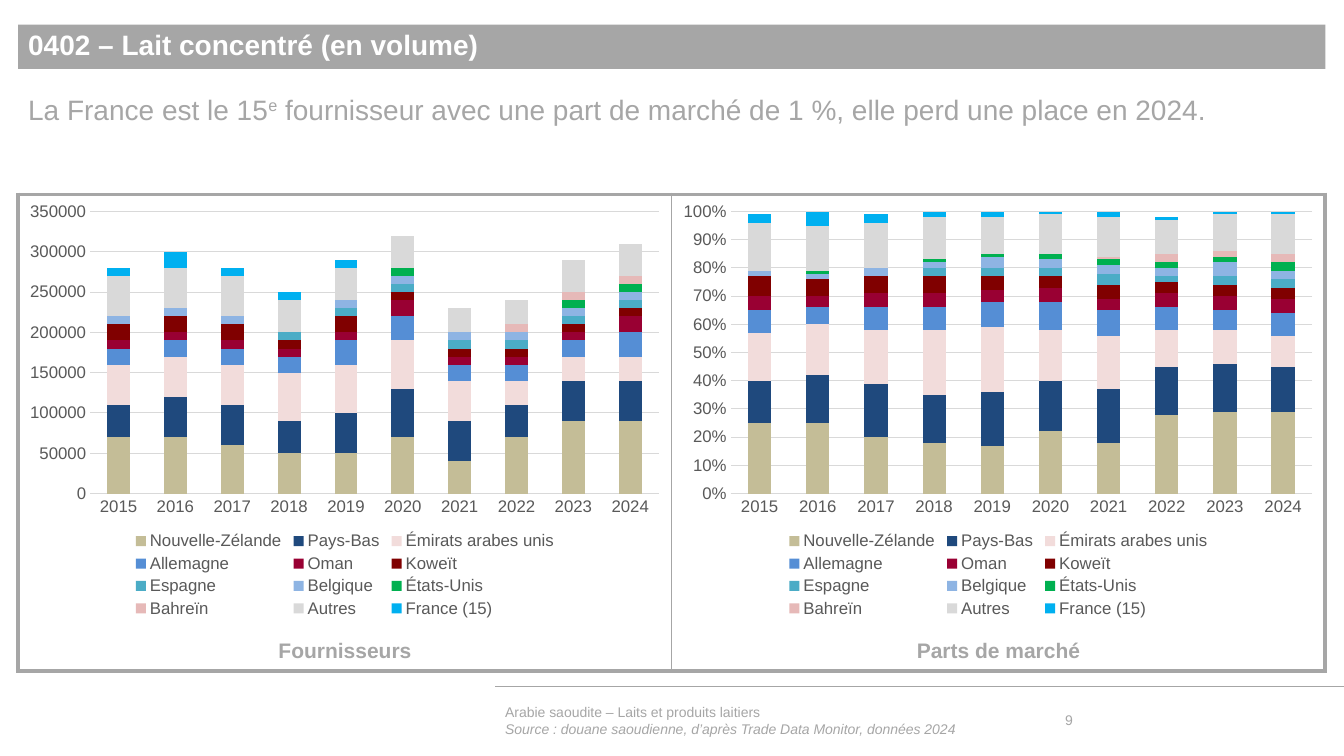
"""Build the slide on concentrated milk suppliers of Saudi Arabia."""
from lxml.etree import SubElement
from pptx import Presentation
from pptx.chart.data import CategoryChartData
from pptx.dml.color import RGBColor
from pptx.enum.chart import XL_CHART_TYPE as ChartType, XL_LEGEND_POSITION as LegendPosition
from pptx.enum.chart import XL_TICK_MARK as TickMark
from pptx.enum.shapes import MSO_CONNECTOR as Connector, MSO_SHAPE as Shape
from pptx.enum.text import MSO_ANCHOR as Anchor, PP_ALIGN as Align
from pptx.oxml import parse_xml
from pptx.oxml.ns import nsdecls, qn
from pptx.util import Cm, Pt

FONT = "Arial"
COLORS = {"grey": "A6A6A6", "white": "FFFFFF", "label": "595959", "grid": "D9D9D9",
          "Nouvelle-Zélande": "C4BD97", "Pays-Bas": "1F497D", "Émirats arabes unis": "F2DCDB",
          "Allemagne": "558ED5", "Oman": "990033", "Koweït": "800000", "Espagne": "4BACC6",
          "Belgique": "8EB4E3", "États-Unis": "00B050", "Bahreïn": "E6B9B8",
          "Autres": "D9D9D9", "France (15)": "00B0F0"}
TITLE = "0402 – Lait concentré (en volume)"
MESSAGE = [("La France est le 15", False), ("e", True),
           (" fournisseur avec une part de marché de 1 %, elle perd une place en 2024.", False)]
FOOTER = ["Arabie saoudite – Laits et produits laitiers",
          "Source : douane saoudienne, d’après Trade Data Monitor, données 2024"]
PAGE_NUMBER = "9"
YEARS = [str(year) for year in range(2015, 2025)]
TEN_THOUSANDS = {
    "Nouvelle-Zélande": [7, 7, 6, 5, 5, 7, 4, 7, 9, 9],
    "Pays-Bas": [4, 5, 5, 4, 5, 6, 5, 4, 5, 5],
    "Émirats arabes unis": [5, 5, 5, 6, 6, 6, 5, 3, 3, 3],
    "Allemagne": [2, 2, 2, 2, 3, 3, 2, 2, 2, 3],
    "Oman": [1, 1, 1, 1, 1, 2, 1, 1, 1, 2],
    "Koweït": [2, 2, 2, 1, 2, 1, 1, 1, 1, 1],
    "Espagne": [0, 0, 0, 1, 1, 1, 1, 1, 1, 1],
    "Belgique": [1, 1, 1, 0, 1, 1, 1, 1, 1, 1],
    "États-Unis": [0, 0, 0, 0, 0, 1, 0, 0, 1, 1],
    "Bahreïn": [0, 0, 0, 0, 0, 0, 0, 1, 1, 1],
    "Autres": [5, 5, 5, 4, 4, 4, 3, 3, 4, 4],
    "France (15)": [1, 2, 1, 1, 1, 0, 0, 0, 0, 0],
}
PERCENTS = {
    "Nouvelle-Zélande": [25, 25, 20, 18, 17, 22, 18, 28, 29, 29],
    "Pays-Bas": [15, 17, 19, 17, 19, 18, 19, 17, 17, 16],
    "Émirats arabes unis": [17, 18, 19, 23, 23, 18, 19, 13, 12, 11],
    "Allemagne": [8, 6, 8, 8, 9, 10, 9, 8, 7, 8],
    "Oman": [5, 4, 5, 5, 4, 5, 4, 5, 5, 5],
    "Koweït": [7, 6, 6, 6, 5, 4, 5, 4, 4, 4],
    "Espagne": [0, 0, 0, 3, 3, 3, 4, 2, 3, 3],
    "Belgique": [2, 2, 3, 2, 4, 3, 3, 3, 5, 3],
    "États-Unis": [0, 1, 0, 1, 1, 2, 2, 2, 2, 3],
    "Bahreïn": [0, 0, 0, 0, 0, 0, 1, 3, 2, 3],
    "Autres": [17, 16, 16, 15, 13, 14, 14, 12, 13, 14],
    "France (15)": [3, 5, 3, 2, 2, 1, 2, 1, 2, 1],
}
PANELS = [
    {"caption": "Fournisseurs", "values": TEN_THOUSANDS, "unit": 10000, "format": "General",
     "max": 350000, "step": 50000, "plot": (0.11, 0.04, 0.87, 0.66)},
    {"caption": "Parts de marché", "values": PERCENTS, "unit": 0.01, "format": "0%",
     "max": 1, "step": 0.1, "plot": (0.09, 0.04, 0.89, 0.66)},
]
LEGEND_AREA = (0.17, 0.78, 0.66, 0.22)
LEFT, TOP, PANEL_WIDTH, PANEL_HEIGHT, CHART_HEIGHT = 0.46, 4.9, 16.47, 12.01, 10.77
FULL_WIDTH = 2 * PANEL_WIDTH


def rgb(name):
    return RGBColor.from_string(COLORS[name])


def style(font, size, color, bold=False, italic=False):
    font.name, font.size, font.bold, font.italic = FONT, Pt(size), bold, italic
    font.color.rgb = rgb(color)


def add_text(page, area, lines, size, anchor=Anchor.TOP, align=Align.LEFT, bold=False):
    box = page.shapes.add_textbox(*map(Cm, area))
    frame = box.text_frame
    frame.word_wrap, frame.vertical_anchor = True, anchor
    frame.text = "\n".join(lines)
    for para in frame.paragraphs:
        para.alignment = align
        for span in para.runs:
            style(span.font, size, "grey", bold)
    return frame


def add_header(page):
    bar = page.shapes.add_shape(Shape.RECTANGLE, *map(Cm, (LEFT, 0.62, FULL_WIDTH, 1.12)))
    bar.shadow.inherit = False
    bar.fill.solid()
    bar.fill.fore_color.rgb = rgb("grey")
    bar.line.fill.background()
    bar.text_frame.text = TITLE
    bar.text_frame.vertical_anchor = Anchor.MIDDLE
    para = bar.text_frame.paragraphs[0]
    para.alignment, para.line_spacing = Align.LEFT, 0.9
    style(para.runs[0].font, 20, "white", bold=True)

    message = add_text(page, (LEFT, 2.29, FULL_WIDTH, 2.06), [""], 20)
    para = message.paragraphs[0]
    para.line_spacing = 0.9
    for text, raised in MESSAGE:
        span = para.add_run()
        span.text = text
        style(span.font, 20, "grey")
        if raised:
            span._r.get_or_add_rPr().set("baseline", "30000")


def add_frame(page):
    area = map(Cm, (LEFT, TOP, FULL_WIDTH, PANEL_HEIGHT))
    table = page.shapes.add_table(1, 2, *area).table
    table.first_row = table.horz_banding = False
    for column, thin_side in enumerate(("lnR", "lnL")):
        cell = table.cell(0, column)
        properties = cell._tc.get_or_add_tcPr()
        for side in ("lnL", "lnR", "lnT", "lnB"):
            width = Pt(1 if side == thin_side else 3)
            border = SubElement(properties, qn(f"a:{side}"), w=str(width))
            fill = SubElement(border, qn("a:solidFill"))
            SubElement(fill, qn("a:srgbClr"), val=COLORS["grey"])
        cell.fill.background()


def make_layout(area, inner=False):
    target = '<c:layoutTarget val="inner"/>' if inner else ""
    modes = "".join(f'<c:{side}Mode val="edge"/>' for side in "xy")
    sizes = "".join(f'<c:{key} val="{value}"/>' for key, value in zip("xywh", area))
    return parse_xml(f'<c:layout {nsdecls("c")}><c:manualLayout>{target}{modes}{sizes}'
                     '</c:manualLayout></c:layout>')


def add_panel(page, left, panel):
    data = CategoryChartData(number_format=panel["format"])
    data.categories = YEARS
    for supplier, values in panel["values"].items():
        data.add_series(supplier, [round(value * panel["unit"], 2) for value in values])
    area = map(Cm, (left, TOP, PANEL_WIDTH, CHART_HEIGHT))
    chart = page.shapes.add_chart(ChartType.COLUMN_STACKED, *area, data).chart
    chart.has_title = False
    style(chart.font, 12, "label")
    plot = chart.plots[0]
    plot.gap_width, plot.overlap, plot.vary_by_categories = 150, 100, False
    for series in plot.series:
        series.format.fill.solid()
        series.format.fill.fore_color.rgb = rgb(series.name)

    years, scale = chart.category_axis, chart.value_axis
    for axis in (years, scale):
        axis.major_tick_mark = axis.minor_tick_mark = TickMark.NONE
        style(axis.tick_labels.font, 12, "label")
    scale.minimum_scale, scale.maximum_scale, scale.major_unit = 0, panel["max"], panel["step"]
    scale.tick_labels.number_format = panel["format"]
    scale.tick_labels.number_format_is_linked = False
    scale.format.line.fill.background()
    for line in (years.format.line, scale.major_gridlines.format.line):
        line.color.rgb, line.width = rgb("grid"), Pt(0.75)

    chart.has_legend = True
    legend = chart.legend
    legend.position, legend.include_in_layout = LegendPosition.BOTTOM, False
    style(legend.font, 12, "label")
    legend._element.find(qn("c:legendPos")).addnext(make_layout(LEGEND_AREA))
    plot_area = chart._chartSpace.chart.plotArea
    for layout in plot_area.findall(qn("c:layout")):
        plot_area.remove(layout)
    plot_area.insert(0, make_layout(panel["plot"], inner=True))

    add_text(page, (left, 15.93, PANEL_WIDTH, 0.89), [panel["caption"]], 15,
             align=Align.CENTER, bold=True)


def add_footer(page):
    rule = page.shapes.add_connector(Connector.STRAIGHT, *map(Cm, (33.87, 17.3, 12.47, 17.3)))
    rule.line.color.rgb, rule.line.width = rgb("grey"), Pt(0.5)
    SubElement(rule._element.spPr, qn("a:effectLst"))
    source = add_text(page, (12.48, 17.65, 13.79, 1.02), FOOTER, 10, Anchor.MIDDLE)
    source.paragraphs[1].runs[0].font.italic = True
    add_text(page, (26.59, 17.64, 2.51, 1.02), [PAGE_NUMBER], 10, Anchor.MIDDLE)


def main():
    deck = Presentation()
    deck.slide_width, deck.slide_height = Cm(33.87), Cm(19.05)
    page = deck.slides.add_slide(deck.slide_layouts[6])
    add_frame(page)
    add_header(page)
    for index, panel in enumerate(PANELS):
        add_panel(page, LEFT + index * PANEL_WIDTH, panel)
    add_footer(page)
    deck.save("out.pptx")


if __name__ == "__main__":
    main()
